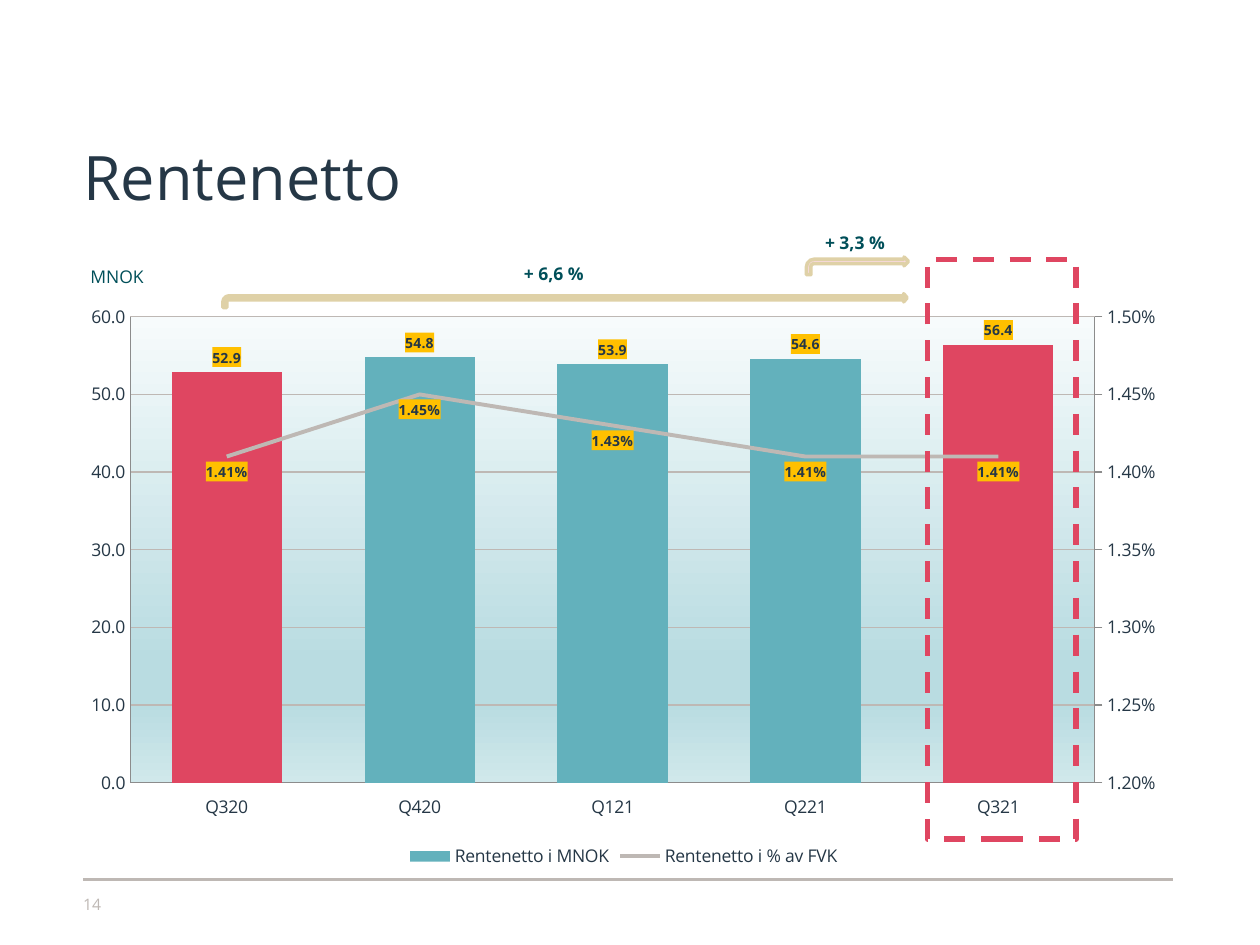
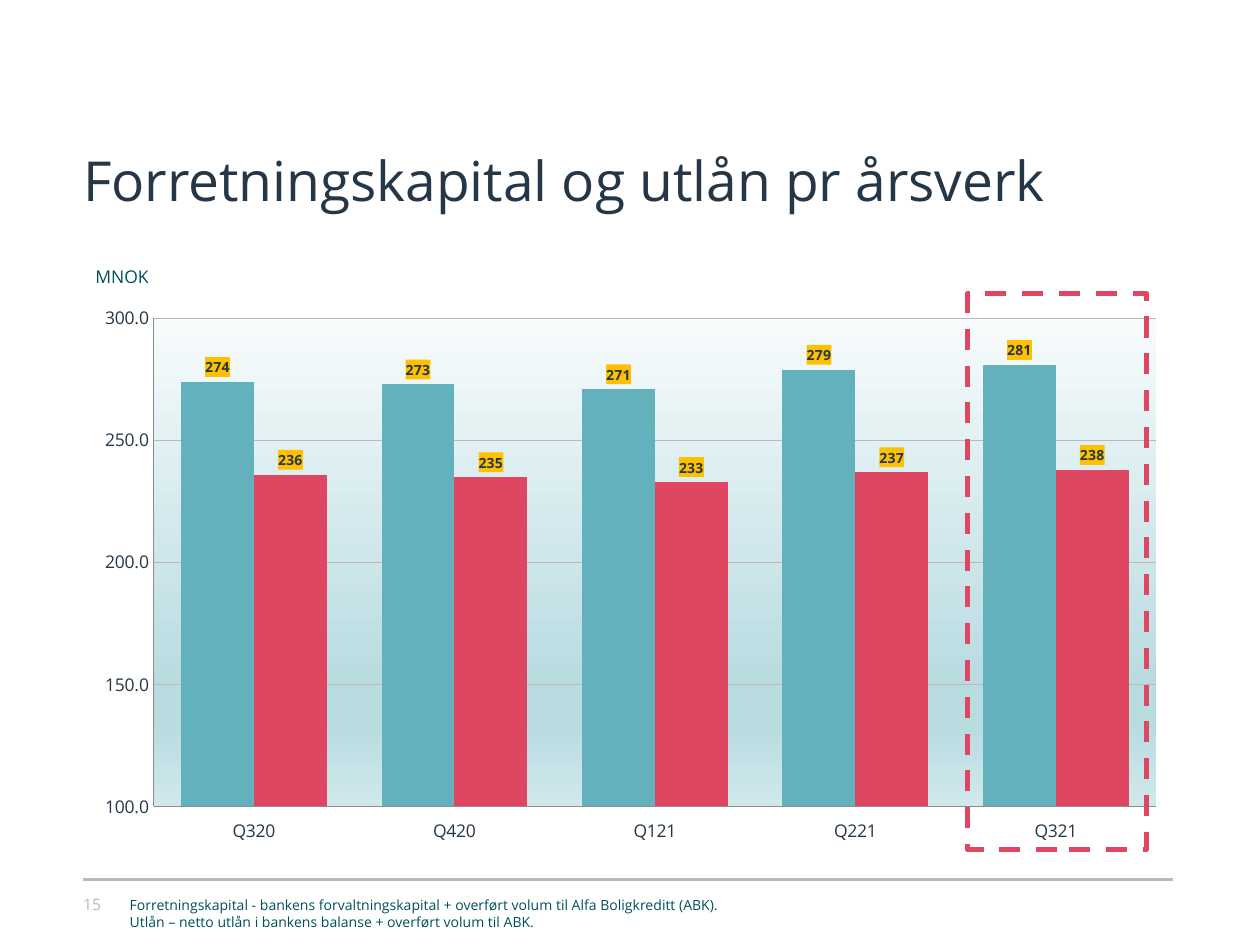
from pptx import Presentation, util as u
from pptx.chart.data import CategoryChartData
from pptx.dml.color import RGBColor
from pptx.enum import chart as c, dml, shapes, text
from pptx.oxml import parse_xml
from pptx.oxml.ns import nsdecls, qn

Pt = u.Pt
theme = {
    "font": "Open Sans",
    "navy": "253746", "green": "004F59", "teal": "63B1BC", "red": "DF4661",
    "grey": "BEB8B4", "axis": "8C8C8C", "sand": "DFD1A7", "pink": "F9DADF",
    "label": "FFC000",
    "plot": [(0, "F7FBFC"), (74, "B9DCE1"), (83, "B9DCE1"), (100, "D0E8EB")],
    "body_size": 10, "number_size": 9, "small_size": 8,
}
NS = nsdecls("c", "a")
quarters = ["Q320", "Q420", "Q121", "Q221", "Q321"]

pages = [
    {
        "number": "14", "title": "Rentenetto", "title_size": 35, "unit_left": 44.6,
        "chart": (39.6, 167.8, 633.6, 331.2), "plot": (0.055, 0.04, 0.87, 0.804),
        "scale": (0, 60, 10), "highlight": (529.9, 148.3, 85, 331.2),
        "series": [
            {"name": "Rentenetto i MNOK", "values": [52.9, 54.8, 53.9, 54.6, 56.4],
             "color": "teal", "format": "0.0", "points": {0: "red", 4: "red"}},
            {"name": "Rentenetto i % av FVK",
             "values": [0.0141, 0.0145, 0.0143, 0.0141, 0.0141],
             "color": "grey", "format": "0.00%"},
        ],
        "line_scale": (0.012, 0.015, 0.0005),
        "growth": [
            {"arrow": (127.4, 167.8, 391, 7.9), "fill": "sand",
             "adjust": (0.286, 0.299, 0.25, 0.438),
             "text": "+ 6,6 %", "label": (292.3, 146.9, 53.3, 19.4)},
            {"arrow": (460.8, 146.9, 58.3, 10.1), "fill": "pink",
             "adjust": (0.25, 0.25, 0.25, 0.438),
             "text": "+ 3,3 %", "label": (464.4, 128.9, 53.3, 19.4)},
        ],
        "footnote": [],
    },
    {
        "number": "15", "title": "Forretningskapital og utlån pr årsverk",
        "title_size": 31.5, "unit_left": 47.5,
        "chart": (31, 167.8, 638.6, 329), "plot": (0.089, 0.043, 0.897, 0.848),
        "scale": (100, 300, 50), "highlight": (553, 167.8, 102.2, 317.5),
        "series": [
            {"name": "Series 1", "values": [274, 273, 271, 279, 281],
             "color": "teal", "format": "#,##0"},
            {"name": "Series 2", "values": [236, 235, 233, 237, 238],
             "color": "red", "format": "0"},
        ],
        "line_scale": None,
        "growth": [],
        "footnote": [
            "Forretningskapital - bankens forvaltningskapital + overført volum "
            "til Alfa Boligkreditt (ABK).",
            "Utlån – netto utlån i bankens balanse + overført volum til ABK.",
        ],
    },
]


def set_format(target, color=None, **values):
    """Set each value on the target, and its colour by theme name."""
    for name, value in values.items():
        setattr(target, name, value)
    if color:
        target.color.rgb = RGBColor.from_string(theme[color])


def add_text(slide, box, lines, size, color, bold=False, wrap=False, inset=True,
             anchor=text.MSO_ANCHOR.TOP):
    frame = slide.shapes.add_textbox(*map(Pt, box)).text_frame
    set_format(frame, word_wrap=wrap, vertical_anchor=anchor)
    if not inset:
        set_format(frame, margin_left=0, margin_top=0, margin_right=0, margin_bottom=0)
    for index, line in enumerate(lines):
        paragraph = frame.add_paragraph() if index else frame.paragraphs[0]
        run = paragraph.add_run()
        run.text = line
        set_format(run.font, color, name=theme["font"], size=Pt(size), bold=bold)


presentation = Presentation()
presentation.slide_width, presentation.slide_height = Pt(720), Pt(540)

for page in pages:
    slide = presentation.slides.add_slide(presentation.slide_layouts[6])

    # Footer rule, title and page number
    rule = slide.shapes.add_connector(
        shapes.MSO_CONNECTOR.STRAIGHT, Pt(47.5), Pt(502.6), Pt(670.3), Pt(502.6))
    set_format(rule.line, "grey", width=Pt(1.42))
    rule._element.spPr.append(parse_xml(f"<a:effectLst {NS}/>"))
    add_text(slide, (47.5, 68.4, 622.1, 53.3), [page["title"]], page["title_size"],
             "navy", wrap=True, inset=False, anchor=text.MSO_ANCHOR.BOTTOM)
    add_text(slide, (47.5, 511.2, 19.4, 15.1), [page["number"]], theme["number_size"],
             "grey", wrap=True, inset=False)

    # Chart
    data = CategoryChartData()
    data.categories = quarters
    for item in page["series"]:
        data.add_series(item["name"], item["values"], item["format"])
    chart = slide.shapes.add_chart(
        c.XL_CHART_TYPE.COLUMN_CLUSTERED, *map(Pt, page["chart"]), data).chart
    chart.has_title = False
    chart.font.color.rgb = RGBColor.from_string(theme["navy"])
    set_format(chart.font, name=theme["font"], size=Pt(theme["body_size"]))
    set_format(chart.plots[0], gap_width=75, overlap=0, vary_by_categories=False)
    chart.has_legend = bool(page["line_scale"])
    if chart.has_legend:
        set_format(chart.legend, position=c.XL_LEGEND_POSITION.BOTTOM,
                   include_in_layout=False)
        set_format(chart.legend.font, size=Pt(theme["body_size"]))

    # Category and value axes
    low, high, step = page["scale"]
    set_format(chart.category_axis, tick_label_position=c.XL_TICK_LABEL_POSITION.LOW)
    set_format(chart.value_axis, minimum_scale=low, maximum_scale=high,
               major_unit=step, has_major_gridlines=True)
    set_format(chart.value_axis.tick_labels, number_format="#,##0.0",
               number_format_is_linked=False)
    set_format(chart.value_axis.major_gridlines.format.line, "grey", width=Pt(0.75))
    for axis in (chart.category_axis, chart.value_axis):
        set_format(axis, major_tick_mark=c.XL_TICK_MARK.NONE,
                   minor_tick_mark=c.XL_TICK_MARK.NONE)
        set_format(axis.format.line, "axis", width=Pt(0.75))
        axis.tick_labels.font.size = Pt(theme["body_size"])

    # Second series as a line on a right-hand axis
    plot_area = chart._chartSpace.chart.plotArea
    if page["line_scale"]:
        low, high, step = page["line_scale"]
        bars = plot_area.find(qn("c:barChart"))
        line_chart = parse_xml(
            f'<c:lineChart {NS}><c:grouping val="standard"/><c:varyColors val="0"/>'
            '<c:marker val="1"/><c:axId val="501"/><c:axId val="502"/></c:lineChart>')
        line_series = bars.findall(qn("c:ser"))[1]
        for bar_setting in line_series.findall(qn("c:invertIfNegative")):
            line_series.remove(bar_setting)
        line_chart.insert(2, line_series)
        bars.addnext(line_chart)
        hidden_axis = parse_xml(
            f'<c:catAx {NS}><c:axId val="501"/><c:scaling><c:orientation val="minMax"/>'
            '</c:scaling><c:delete val="1"/><c:axPos val="b"/><c:crossAx val="502"/>'
            '</c:catAx>')
        right_axis = parse_xml(
            f'<c:valAx {NS}><c:axId val="502"/><c:scaling><c:orientation val="minMax"/>'
            f'<c:max val="{high}"/><c:min val="{low}"/></c:scaling><c:delete val="0"/>'
            '<c:axPos val="r"/><c:numFmt formatCode="0.00%" sourceLinked="0"/>'
            '<c:majorTickMark val="out"/><c:minorTickMark val="none"/>'
            '<c:tickLblPos val="nextTo"/><c:spPr><a:ln w="9525"><a:solidFill>'
            f'<a:srgbClr val="{theme["axis"]}"/></a:solidFill></a:ln></c:spPr>'
            '<c:crossAx val="501"/><c:crosses val="max"/>'
            f'<c:majorUnit val="{step}"/></c:valAx>')
        plot_area.find(qn("c:valAx")).addnext(right_axis)
        right_axis.addnext(hidden_axis)

    # Series colours and value labels
    drawn_series = [series for plot in chart.plots for series in plot.series]
    for series, item in zip(drawn_series, page["series"]):
        is_line = bool(page["line_scale"]) and item is page["series"][-1]
        if is_line:
            series.smooth = False
            series.marker.style = c.XL_MARKER_STYLE.NONE
            set_format(series.format.line, item["color"], width=Pt(2.25))
        else:
            series.invert_if_negative = False
            series.format.fill.solid()
            series.format.fill.fore_color.rgb = RGBColor.from_string(theme[item["color"]])
        for index, color in item.get("points", {}).items():
            fill = series.points[index].format.fill
            fill.solid()
            fill.fore_color.rgb = RGBColor.from_string(theme[color])
        position = c.XL_LABEL_POSITION.BELOW if is_line else c.XL_LABEL_POSITION.OUTSIDE_END
        labels = series.data_labels
        set_format(labels, show_value=True, position=position,
                   number_format=item["format"], number_format_is_linked=False)
        set_format(labels.font, "navy", size=Pt(theme["small_size"]), bold=True)
        labels._element.find(qn("c:numFmt")).addnext(parse_xml(
            f'<c:spPr {NS}><a:solidFill><a:srgbClr val="{theme["label"]}"/>'
            '</a:solidFill></c:spPr>'))

    # Plot area: fixed place and gradient
    for layout in plot_area.findall(qn("c:layout")):
        plot_area.remove(layout)
    places = "".join(f'<c:{name} val="{value}"/>' for name, value in zip("xywh", page["plot"]))
    plot_area.insert(0, parse_xml(
        f'<c:layout {NS}><c:manualLayout><c:layoutTarget val="inner"/>'
        f'<c:xMode val="edge"/><c:yMode val="edge"/>{places}</c:manualLayout></c:layout>'))
    stops = "".join(f'<a:gs pos="{stop * 1000}"><a:srgbClr val="{color}"/></a:gs>'
                    for stop, color in theme["plot"])
    plot_area.append(parse_xml(
        f'<c:spPr {NS}><a:gradFill><a:gsLst>{stops}</a:gsLst>'
        '<a:lin ang="5400000" scaled="0"/></a:gradFill></c:spPr>'))

    # Unit and frame around the latest quarter
    add_text(slide, (page["unit_left"], 148.3, 45.4, 19.4), ["MNOK"],
             theme["body_size"], "green")
    highlight = slide.shapes.add_shape(
        shapes.MSO_SHAPE.RECTANGLE, *map(Pt, page["highlight"]))
    highlight.shadow.inherit = False
    highlight.fill.background()
    set_format(highlight.line, "red", width=Pt(3), dash_style=dml.MSO_LINE.DASH)

    # Growth arrows
    for growth in page["growth"]:
        arrow = slide.shapes.add_shape(
            shapes.MSO_SHAPE.BENT_ARROW, *map(Pt, growth["arrow"]))
        arrow.shadow.inherit = False
        for index, value in enumerate(growth["adjust"]):
            arrow.adjustments[index] = value
        arrow.fill.solid()
        arrow.fill.fore_color.rgb = RGBColor.from_string(theme[growth["fill"]])
        set_format(arrow.line, "sand", width=Pt(2))
        add_text(slide, growth["label"], [growth["text"]], theme["body_size"],
                 "green", bold=True)

    # Footnote
    if page["footnote"]:
        add_text(slide, (67, 509, 609.1, 26.6), page["footnote"],
                 theme["small_size"], "green", wrap=True)

presentation.save("out.pptx")
